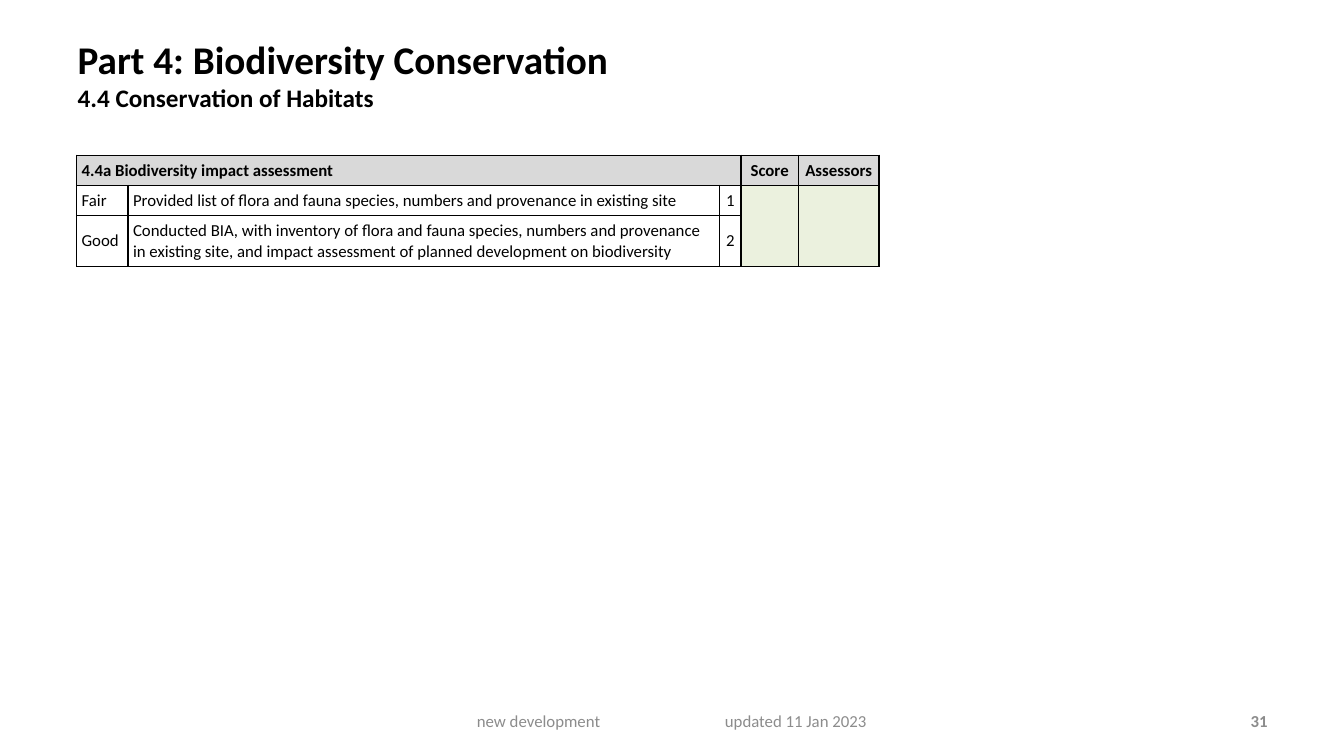
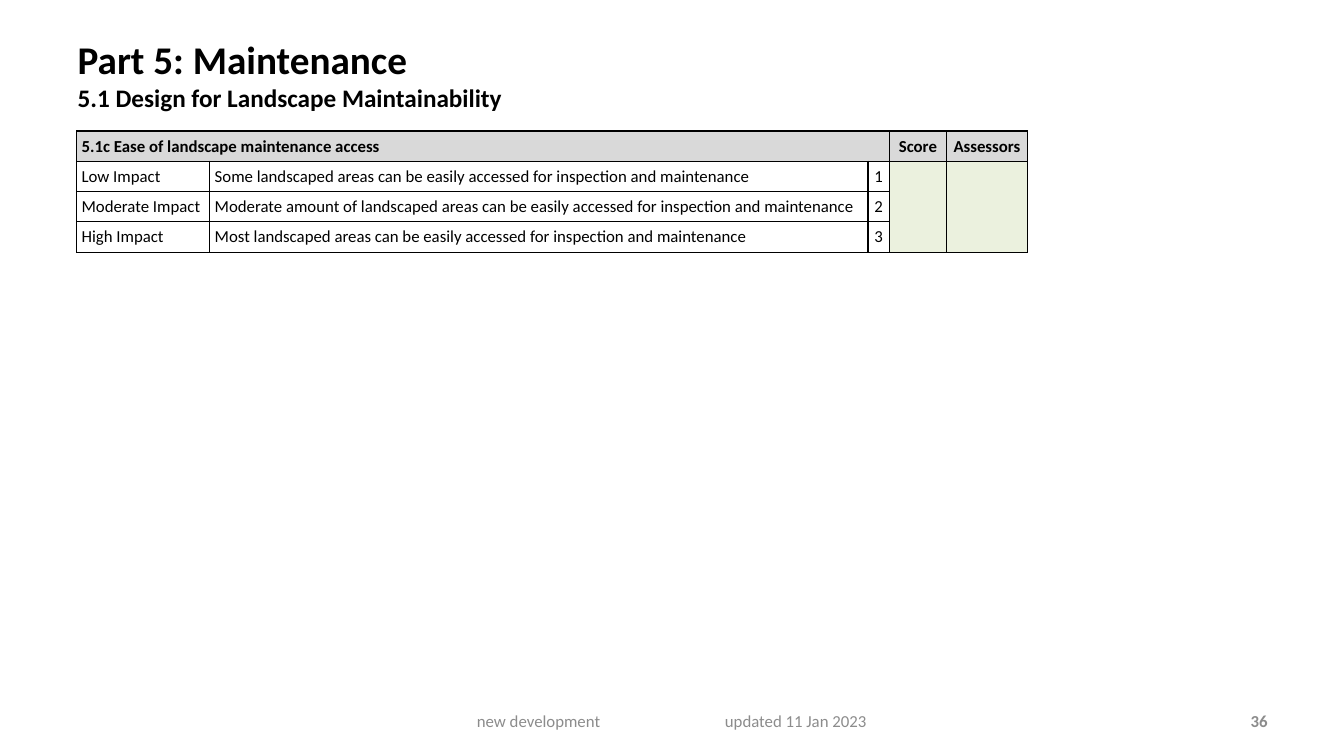
from lxml.etree import SubElement
from pptx import Presentation
from pptx.dml.color import RGBColor
from pptx.enum.text import MSO_ANCHOR, MSO_AUTO_SIZE, PP_ALIGN
from pptx.oxml.ns import qn
from pptx.util import Inches, Pt

HUES = {"ink": "000000", "gray": "8C8C8C", "head": "D9D9D9", "score": "EBF1DE"}
BODY = {"name": "Calibri", "size": Pt(12), "bold": False}
BOLD = {**BODY, "bold": True}
HEAD = {**BOLD, "size": Pt(28)}
SUB = {**BOLD, "size": Pt(18)}
PAD = {f"margin_{side}": Inches(0.05) for side in ("left", "right", "top", "bottom")}
CELL = {**PAD, "vertical_anchor": MSO_ANCHOR.MIDDLE}
TITLE = {"vertical_anchor": MSO_ANCHOR.TOP, "auto_size": MSO_AUTO_SIZE.NONE, "word_wrap": True}
FOOT = {"vertical_anchor": MSO_ANCHOR.MIDDLE, "word_wrap": True}
LEFT, MID, RIGHT = PP_ALIGN.LEFT, PP_ALIGN.CENTER, PP_ALIGN.RIGHT


def apply(item, look):
    for key, value in look.items():
        setattr(item, key, value)


class Deck:
    def __init__(self):
        self.file = Presentation()
        apply(self.file, {"slide_width": Inches(13.33), "slide_height": Inches(7.5)})

    def page(self, part, topic, number):
        self.slide = self.file.slides.add_slide(self.file.slide_layouts[5])
        self.title(part, topic)
        self.footer(number)

    def text(self, para, words, look, hue="ink"):
        run = para.add_run()
        run.text = words
        apply(run.font, look)
        run.font.color.rgb = RGBColor.from_string(HUES[hue])

    def title(self, part, topic):
        box = self.slide.shapes.title
        place = {"left": 0.67, "top": 0.3, "width": 10.36, "height": 0.99}
        apply(box, {key: Inches(value) for key, value in place.items()})
        apply(box.text_frame, TITLE)
        para = box.text_frame.paragraphs[0]
        para.alignment = LEFT
        self.text(para, part, HEAD)
        para.add_line_break()
        self.text(para, topic, SUB)

    def note(self, left, width, words, look, align, pad=0.1):
        box = self.slide.shapes.add_textbox(
            Inches(left), Inches(6.95), Inches(width), Inches(0.4))
        apply(box.text_frame, {**FOOT, "margin_left": Inches(pad)})
        para = box.text_frame.paragraphs[0]
        para.alignment = align
        self.text(para, words, look, "gray")
        return para

    def footer(self, number):
        para = self.note(4.56, 4.22, "new development\tupdated 11 Jan 2023", BODY, LEFT, 0.17)
        tabs = SubElement(para._p.get_or_add_pPr(), qn("a:tabLst"))
        SubElement(tabs, qn("a:tab"), pos=str(Inches(2.46)), algn="l")
        self.note(9.56, 3.11, str(number), BOLD, RIGHT)

    def border(self, cell):
        props = cell._tc.get_or_add_tcPr()
        for side in ("lnL", "lnR", "lnT", "lnB"):
            line = SubElement(props, qn(f"a:{side}"), w=str(Pt(1)))
            fill = SubElement(line, qn("a:solidFill"))
            SubElement(fill, qn("a:srgbClr"), val=HUES["ink"])

    def cell(self, cell, words, look, align, hue):
        apply(cell, CELL)
        self.border(cell)
        if hue:
            cell.fill.solid()
            cell.fill.fore_color.rgb = RGBColor.from_string(HUES[hue])
        else:
            cell.fill.background()
        para = cell.text_frame.paragraphs[0]
        para.alignment = align
        if words:
            self.text(para, words, look)
        else:
            SubElement(para._p, qn("a:endParaRPr"), sz="1200")

    def table(self, top, name, first, second, grades, highs):
        wide = [first, second, 0.21, 0.57, 0.8]
        rows = [(name, "", "", "Score", "Assessors")]
        rows += [(*grade, str(i), "", "") for i, grade in enumerate(grades, 1)]
        table = self.slide.shapes.add_table(
            len(rows), len(wide), Inches(0.76), Inches(top),
            Inches(sum(wide)), Inches(sum(highs))).table
        apply(table, {"first_row": False, "horz_banding": False})
        for col, width in zip(table.columns, wide):
            col.width = Inches(width)
        for row, high in zip(table.rows, highs):
            row.height = Inches(high)
        for r, row in enumerate(rows):
            for c, words in enumerate(row):
                hue = "head" if r == 0 else "score" if c > 2 else None
                self.cell(table.cell(r, c), words, BODY if r else BOLD,
                          MID if c > 1 else LEFT, hue)
        table.cell(0, 0).merge(table.cell(0, 2))
        for c in (3, 4):
            table.cell(1, c).merge(table.cell(len(grades), c))


def main():
    deck = Deck()
    deck.page("Part 4: Biodiversity Conservation", "4.4 Conservation of Habitats", 31)
    deck.table(1.54, "4.4a Biodiversity impact assessment", 0.51, 5.87, [
        ("Fair", "Provided list of flora and fauna species, numbers and provenance "
                 "in existing site"),
        ("Good", "Conducted BIA, with inventory of flora and fauna species, numbers and "
                 "provenance in existing site, and impact assessment of planned "
                 "development on biodiversity"),
    ], [0.3, 0.3, 0.5])
    deck.page("Part 5: Maintenance", "5.1 Design for Landscape Maintainability", 36)
    ease = "landscaped areas can be easily accessed for inspection and maintenance"
    deck.table(1.3, "5.1c Ease of landscape maintenance access", 1.32, 6.53, [
        ("Low Impact", f"Some {ease}"),
        ("Moderate Impact", f"Moderate amount of {ease}"),
        ("High Impact", f"Most {ease}"),
    ], [0.3] * 4)
    deck.file.save("out.pptx")


if __name__ == "__main__":
    main()
